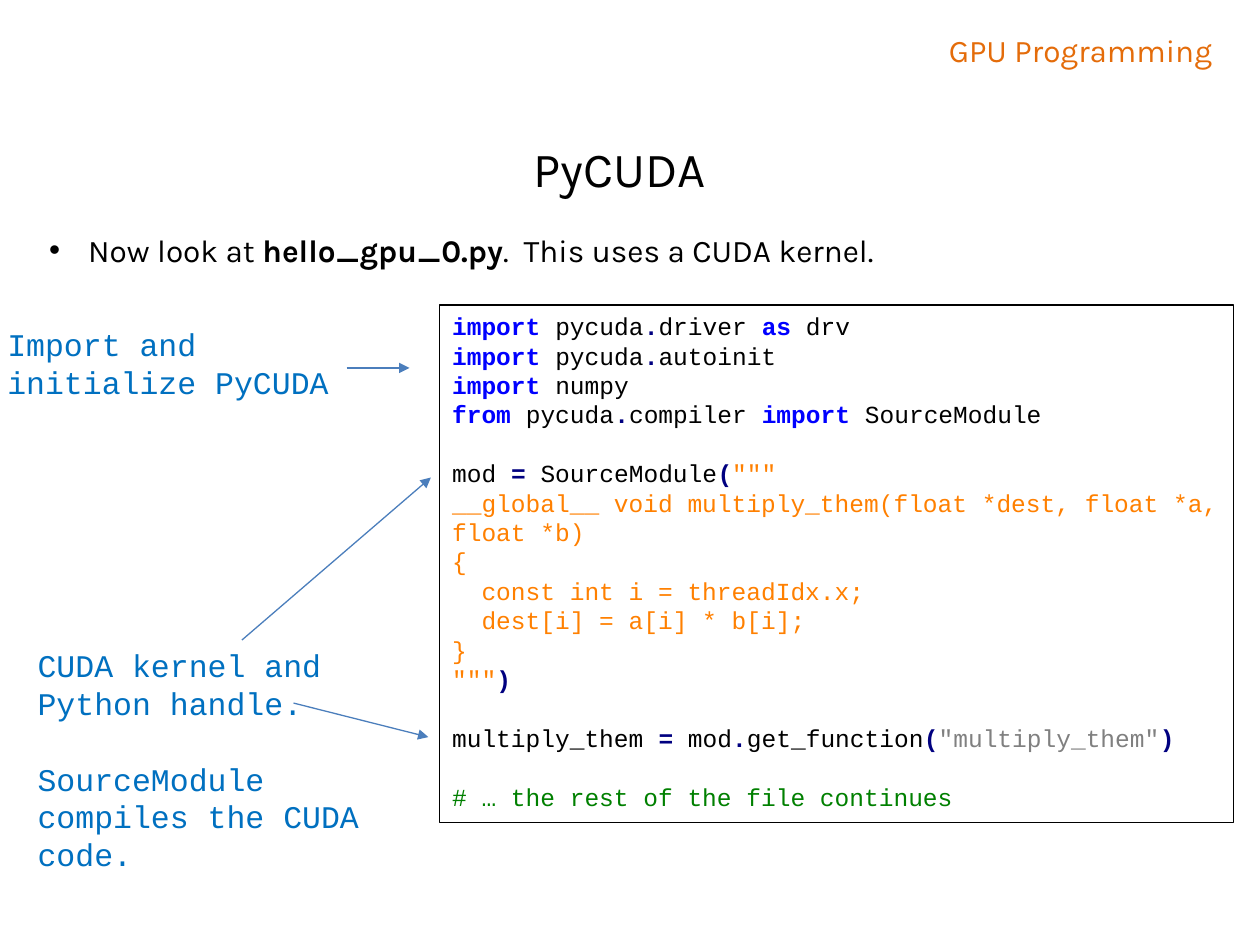
import lxml.etree
import pptx
import pptx.util
import pptx.dml.color
import pptx.enum.shapes
import pptx.enum.text
import pptx.oxml.ns

Inches, Pt = pptx.util.Inches, pptx.util.Pt
ALIGN = pptx.enum.text.PP_ALIGN
SANS, MONO = "Karla", "Courier New"

COLORS = {
    "course": "E46C0A",
    "plain": "000000",
    "note": "0070C0",
    "arrow": "4B7EBC",
    "keyword": "0000FF",
    "operator": "000080",
    "kernel": "FF8000",
    "string": "808080",
    "comment": "008000",
}
BOLD_KINDS = {"keyword", "operator"}

# One entry per code line, in (kind, text) tokens; each block is set off by a gap.
DOT, EQUALS = ("operator", "."), ("operator", "=")
OPEN, CLOSE = ("operator", "("), ("operator", ")")
CODE_BLOCKS = [
    [
        [("keyword", "import"), ("plain", " pycuda"), DOT, ("plain", "driver "),
         ("keyword", "as"), ("plain", " drv")],
        [("keyword", "import"), ("plain", " pycuda"), DOT, ("plain", "autoinit")],
        [("keyword", "import"), ("plain", " numpy")],
        [("keyword", "from"), ("plain", " pycuda"), DOT, ("plain", "compiler "),
         ("keyword", "import"), ("plain", " SourceModule")],
    ],
    [
        [("plain", "mod "), EQUALS, ("plain", " SourceModule"), OPEN, ("kernel", '"""')],
        [("kernel", "__global__ void multiply_them(float *dest, float *a, float *b)")],
        [("kernel", "{")],
        [("kernel", "  const int i = threadIdx.x;")],
        [("kernel", "  dest[i] = a[i] * b[i];")],
        [("kernel", "}")],
        [("kernel", '"""'), CLOSE],
    ],
    [
        [("plain", "multiply_them "), EQUALS, ("plain", " mod"), DOT,
         ("plain", "get_function"), OPEN, ("string", '"multiply_them"'), CLOSE],
    ],
    [[("comment", "# … the rest of the file continues")]],
]


def rgb(name):
    return pptx.dml.color.RGBColor.from_string(COLORS[name])


def add_run(paragraph, text, *, size=18, font=SANS, color="plain", bold=False):
    run = paragraph.add_run()
    run.text = text
    run.font.size = Pt(size)
    run.font.name = font
    run.font.bold = bold
    run.font.color.rgb = rgb(color)


def next_paragraph(frame):
    """Return the empty first paragraph, or a new one once that has text."""
    first = frame.paragraphs[0]
    return frame.add_paragraph() if first.runs else first


def prepare_frame(shape):
    frame = shape.text_frame
    frame.word_wrap = True
    frame.auto_size = pptx.enum.text.MSO_AUTO_SIZE.NONE
    frame.vertical_anchor = pptx.enum.text.MSO_ANCHOR.TOP
    return frame


def place(shape, left, top, width, height):
    shape.left, shape.top = Inches(left), Inches(top)
    shape.width, shape.height = Inches(width), Inches(height)


def add_text(slide, box, texts, *, align=ALIGN.LEFT, gap=0, **style):
    """Add a text box with one paragraph per text, gap points apart."""
    frame = prepare_frame(slide.shapes.add_textbox(*map(Inches, box)))
    for index, text in enumerate(texts):
        paragraph = next_paragraph(frame)
        paragraph.alignment = align
        paragraph.space_before = Pt(gap if index else 0)
        add_run(paragraph, text, **style)


def fill_title(slide):
    title = slide.shapes.title
    place(title, 1.42, 0.58, 7, 0.9)
    paragraph = prepare_frame(title).paragraphs[0]
    paragraph.alignment = ALIGN.CENTER
    paragraph.line_spacing = 2.0
    add_run(paragraph, "PyCUDA", size=28)


def fill_bullet(slide):
    body = slide.placeholders[1]
    place(body, 0.29, 1.48, 9.62, 1.92)
    paragraph = prepare_frame(body).paragraphs[0]
    paragraph.line_spacing = 2.0
    paragraph.space_before = Pt(0)
    properties = paragraph._p.get_or_add_pPr()
    properties.set("marL", str(Inches(0.31)))
    properties.set("indent", str(Inches(-0.31)))
    add_run(paragraph, "Now look at ")
    add_run(paragraph, "hello_gpu_0.py", bold=True)
    add_run(paragraph, ".  This uses a CUDA kernel.")


def add_arrow(slide, start, end):
    arrow = slide.shapes.add_connector(
        pptx.enum.shapes.MSO_CONNECTOR.STRAIGHT, *map(Inches, start + end))
    arrow.line.color.rgb = rgb("arrow")
    arrow.line.width = Pt(0.75)
    properties, qn = arrow._element.spPr, pptx.oxml.ns.qn
    outline = properties.find(qn("a:ln"))
    lxml.etree.SubElement(outline, qn("a:tailEnd"), type="triangle")
    lxml.etree.SubElement(properties, qn("a:effectLst"))


def add_code(slide, box):
    listing = slide.shapes.add_shape(
        pptx.enum.shapes.MSO_SHAPE.RECTANGLE, *map(Inches, box))
    listing.shadow.inherit = False
    listing.fill.background()
    listing.line.color.rgb = rgb("plain")
    listing.line.width = Pt(0.75)
    frame = prepare_frame(listing)
    for block_number, block in enumerate(CODE_BLOCKS):
        for line_number, tokens in enumerate(block):
            paragraph = next_paragraph(frame)
            paragraph.alignment = ALIGN.LEFT
            starts_block = block_number > 0 and line_number == 0
            paragraph.space_before = Pt(16.8 if starts_block else 0)
            for kind, text in tokens:
                add_run(paragraph, text, size=14, font=MONO, color=kind,
                        bold=kind in BOLD_KINDS)


def main():
    deck = pptx.Presentation()
    deck.slide_width, deck.slide_height = Inches(10), Inches(7.5)
    slide = deck.slides.add_slide(deck.slide_layouts[1])

    add_text(slide, (5.22, 0.2, 4.5, 0.4), ["GPU Programming"],
             align=ALIGN.RIGHT, color="course")
    fill_title(slide)
    fill_bullet(slide)

    add_text(slide, (-0.04, 2.53, 2.96, 0.71), ["Import and initialize PyCUDA"],
             font=MONO, color="note")
    add_text(slide, (0.2, 5.08, 2.96, 1.92),
             ["CUDA kernel and Python handle.", "SourceModule compiles the CUDA code."],
             gap=21.6, font=MONO, color="note")
    for start, end in [((2.75, 2.92), (3.25, 2.92)),
                       ((1.92, 5.08), (3.42, 3.79)),
                       ((2.33, 5.58), (3.4, 5.85))]:
        add_arrow(slide, start, end)
    add_code(slide, (3.49, 2.42, 6.3, 4.11))

    deck.save("out.pptx")


if __name__ == "__main__":
    main()
